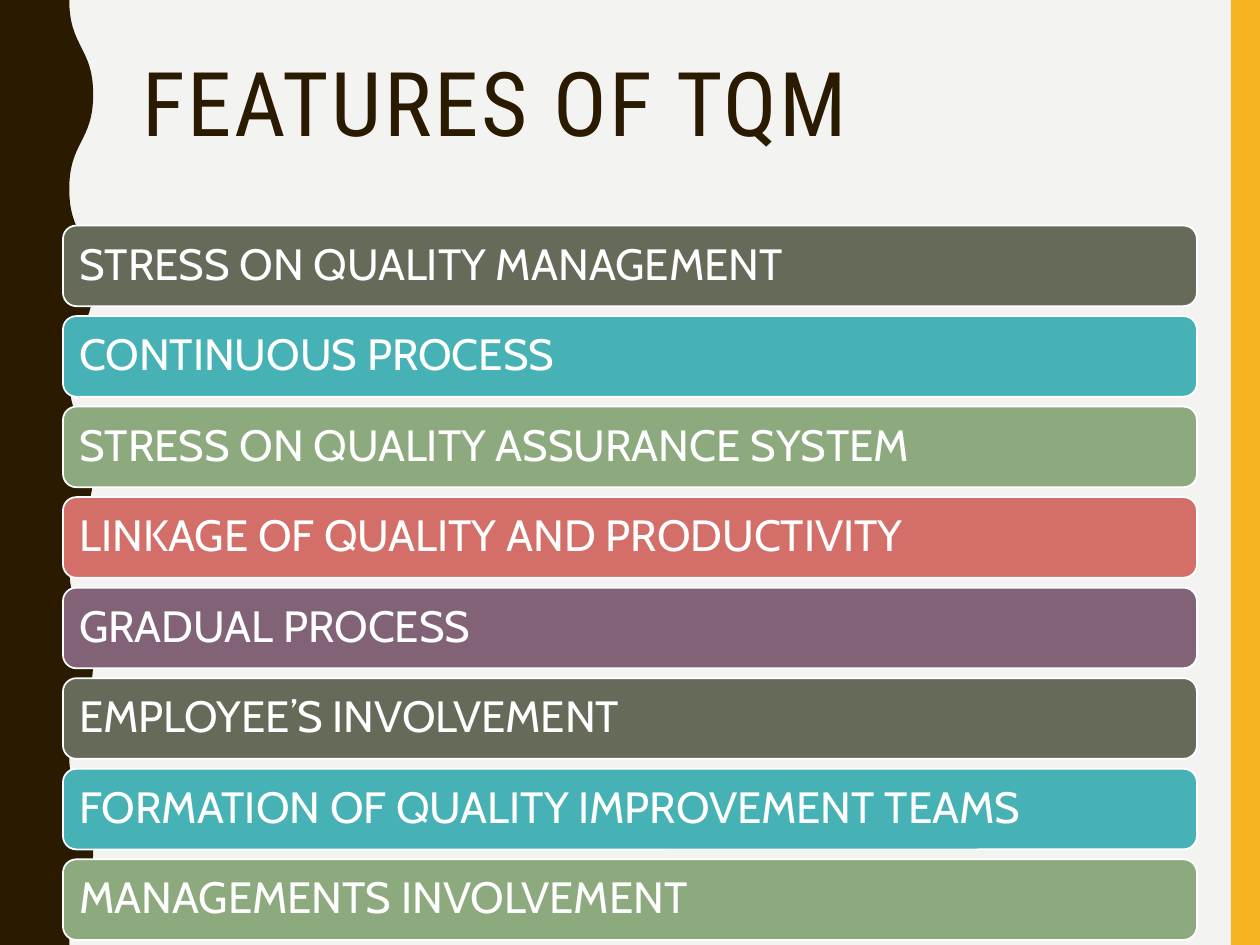
import lxml.etree
import pptx
import pptx.util
import pptx.dml.color
import pptx.enum.shapes
import pptx.enum.text
import pptx.oxml.ns

Inches, Pt, qn = pptx.util.Inches, pptx.util.Pt, pptx.oxml.ns.qn
SHAPES = pptx.enum.shapes.MSO_SHAPE
ANCHOR = pptx.enum.text.MSO_ANCHOR
ALIGN = pptx.enum.text.PP_ALIGN

WIDTH, HEIGHT = 10, 7.5
COLORS = {
    "background": "F3F3F2", "dark": "2A1A00", "gold": "F8B323", "white": "FFFFFF",
    "olive": "656A59", "teal": "46B2B5", "green": "8CAA7E",
    "coral": "D36F68", "plum": "826276",
}
BAR_COLORS = ["olive", "teal", "green", "coral", "plum"]
FEATURES = [
    "STRESS ON QUALITY MANAGEMENT",
    "CONTINUOUS PROCESS",
    "STRESS ON QUALITY ASSURANCE SYSTEM",
    "LINKAGE OF QUALITY AND PRODUCTIVITY",
    "GRADUAL PROCESS",
    "EMPLOYEE’S INVOLVEMENT",
    "FORMATION OF QUALITY IMPROVEMENT TEAMS",
    "MANAGEMENTS INVOLVEMENT",
]
BAR_LEFT, BAR_WIDTH, BAR_HEIGHT = 0.05 * WIDTH, 0.9 * WIDTH, 0.64
FIRST_TOP, LAST_TOP = 1.79, 6.82
BAR_PITCH = (LAST_TOP - FIRST_TOP) / (len(FEATURES) - 1)
WAVE_X, HALF_WAVES = (0.55, 0.74), 10


def rgb(name):
    return pptx.dml.color.RGBColor.from_string(COLORS[name])


def paint(sp, fill, line=None):
    sp.shadow.inherit = False
    sp.fill.solid()
    sp.fill.fore_color.rgb = rgb(fill)
    if line:
        sp.line.color.rgb = rgb(line)
        sp.line.width = Pt(1)
    else:
        sp.line.fill.background()


def add_box(s, shape, left, top, width, height, fill, line=None):
    sp = s.shapes.add_shape(shape, Inches(left), Inches(top), Inches(width), Inches(height))
    paint(sp, fill, line)
    return sp


def write(sp, text, font, size, color, anchor, inset):
    """Fill a shape with one left-aligned line; inset is (side, top) in inches."""
    tf = sp.text_frame
    tf.word_wrap = True
    tf.vertical_anchor = anchor
    tf.margin_left = tf.margin_right = Inches(inset[0])
    tf.margin_top = tf.margin_bottom = Inches(inset[1])
    p = tf.paragraphs[0]
    p.text = text
    p.alignment = ALIGN.LEFT
    p.line_spacing = 0.9
    p.font.name = font
    p.font.size = Pt(size)
    p.font.color.rgb = rgb(color)
    return p


def bend(segment, start, end):
    """Turn a straight segment into an S-curve that leaves and arrives vertically."""
    middle = (start[1] + end[1]) / 2
    curve = lxml.etree.Element(qn("a:cubicBezTo"))
    for x, y in [(start[0], middle), (end[0], middle), end]:
        lxml.etree.SubElement(curve, qn("a:pt"), x=str(Inches(x)), y=str(Inches(y)))
    segment.getparent().replace(segment, curve)


def add_wavy_edge(s):
    wave = [(WAVE_X[i % 2], HEIGHT * i / HALF_WAVES) for i in range(HALF_WAVES + 1)]
    builder = s.shapes.build_freeform(Inches(wave[0][0]), 0)
    outline = [*wave[1:], (0, HEIGHT), (0, 0)]
    builder.add_line_segments([(Inches(x), Inches(y)) for x, y in outline], close=True)
    sp = builder.convert_to_shape()
    paint(sp, "dark")
    segments = list(sp._element.iter(qn("a:lnTo")))
    for segment, start, end in zip(segments, wave, wave[1:]):
        bend(segment, start, end)


def add_title(s, text):
    sp = s.shapes.add_textbox(Inches(1.03), Inches(0.42), Inches(8.35), Inches(1.63))
    p = write(sp, text, "Roboto Condensed", 51, "dark", ANCHOR.TOP, (0.1, 0.05))
    p.runs[0].font._element.set("spc", "150")


def add_feature(s, row, text):
    color = BAR_COLORS[row % len(BAR_COLORS)]
    sp = add_box(s, SHAPES.ROUNDED_RECTANGLE, BAR_LEFT, FIRST_TOP + row * BAR_PITCH,
                 BAR_WIDTH, BAR_HEIGHT, color, "white")
    write(sp, text, "Cabin", 25, "white", ANCHOR.MIDDLE, (0.1, 0.1))


def main():
    prs = pptx.Presentation()
    prs.slide_width, prs.slide_height = Inches(WIDTH), Inches(HEIGHT)
    s = prs.slides.add_slide(prs.slide_layouts[6])
    s.background.fill.solid()
    s.background.fill.fore_color.rgb = rgb("background")
    add_box(s, SHAPES.RECTANGLE, 9.77, 0, 0.23, HEIGHT, "gold")
    add_wavy_edge(s)
    add_title(s, "FEATURES OF TQM")
    for row, text in enumerate(FEATURES):
        add_feature(s, row, text)
    prs.save("out.pptx")


if __name__ == "__main__":
    main()
